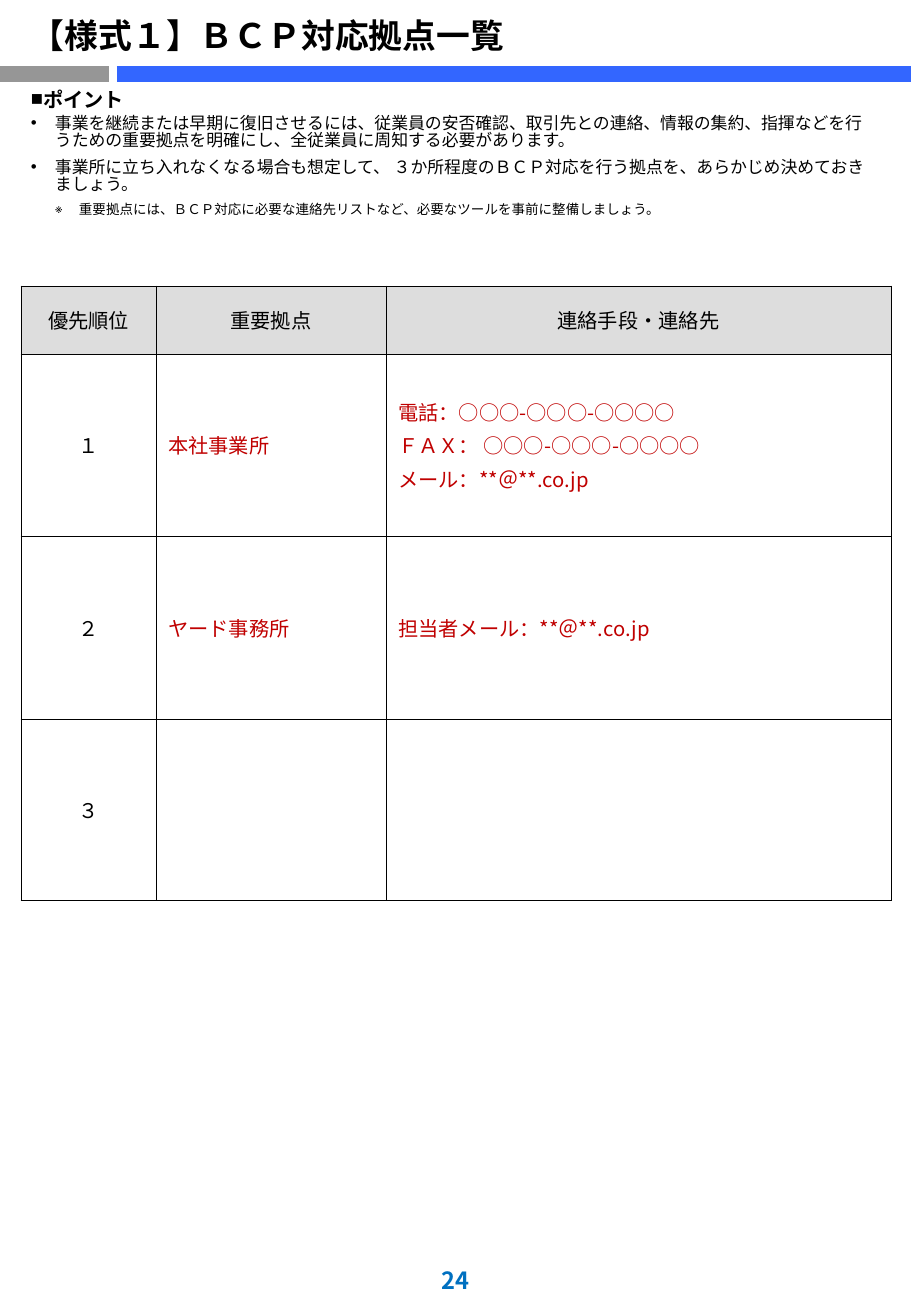
from dataclasses import dataclass

from pptx import Presentation
from pptx.dml.color import RGBColor
from pptx.enum.shapes import MSO_CONNECTOR
from pptx.enum.text import MSO_ANCHOR, PP_ALIGN
from pptx.oxml.ns import qn
from pptx.util import Pt
from lxml import etree

PX = 7526
FONT = "Noto Sans CJK JP"
BULLET_FONT = "Arial"
BLACK = RGBColor(0x00, 0x00, 0x00)
RED = RGBColor(0xC0, 0x00, 0x00)
GRAY = RGBColor(0x96, 0x96, 0x96)
BLUE = RGBColor(0x33, 0x66, 0xFF)
PAGE_BLUE = RGBColor(0x00, 0x70, 0xC0)
HEADER_FILL = RGBColor(0xDD, 0xDD, 0xDD)
STRAIGHT = MSO_CONNECTOR.STRAIGHT
MIDDLE = MSO_ANCHOR.MIDDLE
BOTTOM = MSO_ANCHOR.BOTTOM
TOP = MSO_ANCHOR.TOP
CENTER = PP_ALIGN.CENTER
LEFT = PP_ALIGN.LEFT

SLIDE_WIDTH, SLIDE_HEIGHT = 911, 1316
COLUMN_WIDTHS = (135, 230, 505)
ROW_HEIGHTS = (68, 182, 183, 182)


@dataclass(frozen=True)
class Bar:
    left: int
    right: int
    color: RGBColor


@dataclass(frozen=True)
class Point:
    text: str
    bullet: str
    size: int
    margin: int
    indent: int
    after: int
    bold: bool = False


BARS = (Bar(0, 109, GRAY), Bar(117, SLIDE_WIDTH, BLUE))

POINTS = (
    Point("ポイント", "■", 12, 0, 0, 3, True),
    Point("事業を継続または早期に復旧させるには、従業員の安否確認、取引先との連絡、情報の集約、"
          "指揮などを行うための重要拠点を明確にし、全従業員に周知する必要があります。",
          "•", 10, 24, -24, 6),
    Point("事業所に立ち入れなくなる場合も想定して、 ３か所程度のＢＣＰ対応を行う拠点を、"
          "あらかじめ決めておきましょう。", "•", 10, 24, -24, 6),
    Point("重要拠点には、ＢＣＰ対応に必要な連絡先リストなど、必要なツールを事前に整備しましょう。",
          "※", 8, 48, -24, 3),
)

SITES = (
    (("優先順位",), ("重要拠点",), ("連絡手段・連絡先",)),
    (("１",), ("本社事業所",),
     ("電話：○○○-○○○-○○○○", "ＦＡＸ： ○○○-○○○-○○○○", "メール：**＠**.co.jp")),
    (("２",), ("ヤード事務所",), ("担当者メール：**＠**.co.jp",)),
    (("３",), (), ()),
)


def add_run(para, text: str, size: int, color: RGBColor, bold: bool = False) -> None:
    span = para.add_run()
    span.text = text
    span.font.name = FONT
    span.font.size = Pt(size)
    span.font.bold = bold
    span.font.color.rgb = color
    east_asian = etree.SubElement(span.font._element, qn("a:ea"))
    east_asian.set("typeface", FONT)


def add_box(page, left: int, top: int, width: int, height: int, anchor):
    box = page.shapes.add_textbox(left * PX, top * PX, width * PX, height * PX)
    frame = box.text_frame
    frame.word_wrap = True
    frame.vertical_anchor = anchor
    return frame


def add_bar(page, bar: Bar) -> None:
    line = page.shapes.add_connector(STRAIGHT, bar.left * PX, 74 * PX, bar.right * PX, 74 * PX)
    line.line.color.rgb = bar.color
    line.line.width = Pt(10)
    etree.SubElement(line._element.spPr, qn("a:effectLst"))


def set_bullet(para, point: Point) -> None:
    properties = para._p.get_or_add_pPr()
    properties.set("marL", str(point.margin * PX))
    properties.set("indent", str(point.indent * PX))
    etree.SubElement(properties, qn("a:buFont")).set("typeface", BULLET_FONT)
    etree.SubElement(properties, qn("a:buChar")).set("char", point.bullet)


def add_points(page) -> None:
    frame = add_box(page, 19, 85, 871, 159, TOP)
    for index, point in enumerate(POINTS):
        para = frame.add_paragraph() if index else frame.paragraphs[0]
        set_bullet(para, point)
        para.line_spacing = 0.83
        para.space_after = Pt(point.after)
        add_run(para, point.text, point.size, BLACK, point.bold)


def set_borders(cell) -> None:
    properties = cell._tc.get_or_add_tcPr()
    for side in ("a:lnL", "a:lnR", "a:lnT", "a:lnB"):
        border = etree.SubElement(properties, qn(side), w=str(Pt(0.5)))
        fill = etree.SubElement(border, qn("a:solidFill"))
        etree.SubElement(fill, qn("a:srgbClr"), val=str(BLACK))


def fill_cell(cell, lines: tuple[str, ...], is_header: bool, is_rank: bool) -> None:
    set_borders(cell)
    cell.vertical_anchor = MIDDLE
    if is_header:
        cell.fill.solid()
        cell.fill.fore_color.rgb = HEADER_FILL
    else:
        cell.fill.background()
    centered = is_header or is_rank
    for index, text in enumerate(lines):
        para = cell.text_frame.add_paragraph() if index else cell.text_frame.paragraphs[0]
        para.alignment = CENTER if centered else LEFT
        if index:
            para.space_before = Pt(2.4)
        add_run(para, text, 12, BLACK if centered else RED)


def add_site_table(page) -> None:
    table = page.shapes.add_table(
        len(ROW_HEIGHTS), len(COLUMN_WIDTHS), 21 * PX, 286 * PX,
        sum(COLUMN_WIDTHS) * PX, sum(ROW_HEIGHTS) * PX).table
    table.first_row = False
    table.horz_banding = False
    for column, width in zip(table.columns, COLUMN_WIDTHS):
        column.width = width * PX
    for row, height in zip(table.rows, ROW_HEIGHTS):
        row.height = height * PX
    for row_index, site in enumerate(SITES):
        for column_index, lines in enumerate(site):
            fill_cell(table.cell(row_index, column_index), lines,
                      row_index == 0, column_index == 0)


def main() -> None:
    deck = Presentation()
    deck.slide_width = SLIDE_WIDTH * PX
    deck.slide_height = SLIDE_HEIGHT * PX
    page = deck.slides.add_slide(deck.slide_layouts[6])
    for bar in BARS:
        add_bar(page, bar)
    title = add_box(page, 19, 5, 871, 56, BOTTOM)
    add_run(title.paragraphs[0], "【様式１】ＢＣＰ対応拠点一覧", 20, BLACK, True)
    add_site_table(page)
    add_points(page)
    number = add_box(page, 0, 1251, SLIDE_WIDTH, 49, BOTTOM).paragraphs[0]
    number.alignment = CENTER
    add_run(number, "24", 14, PAGE_BLUE, True)
    deck.save("out.pptx")


if __name__ == "__main__":
    main()
